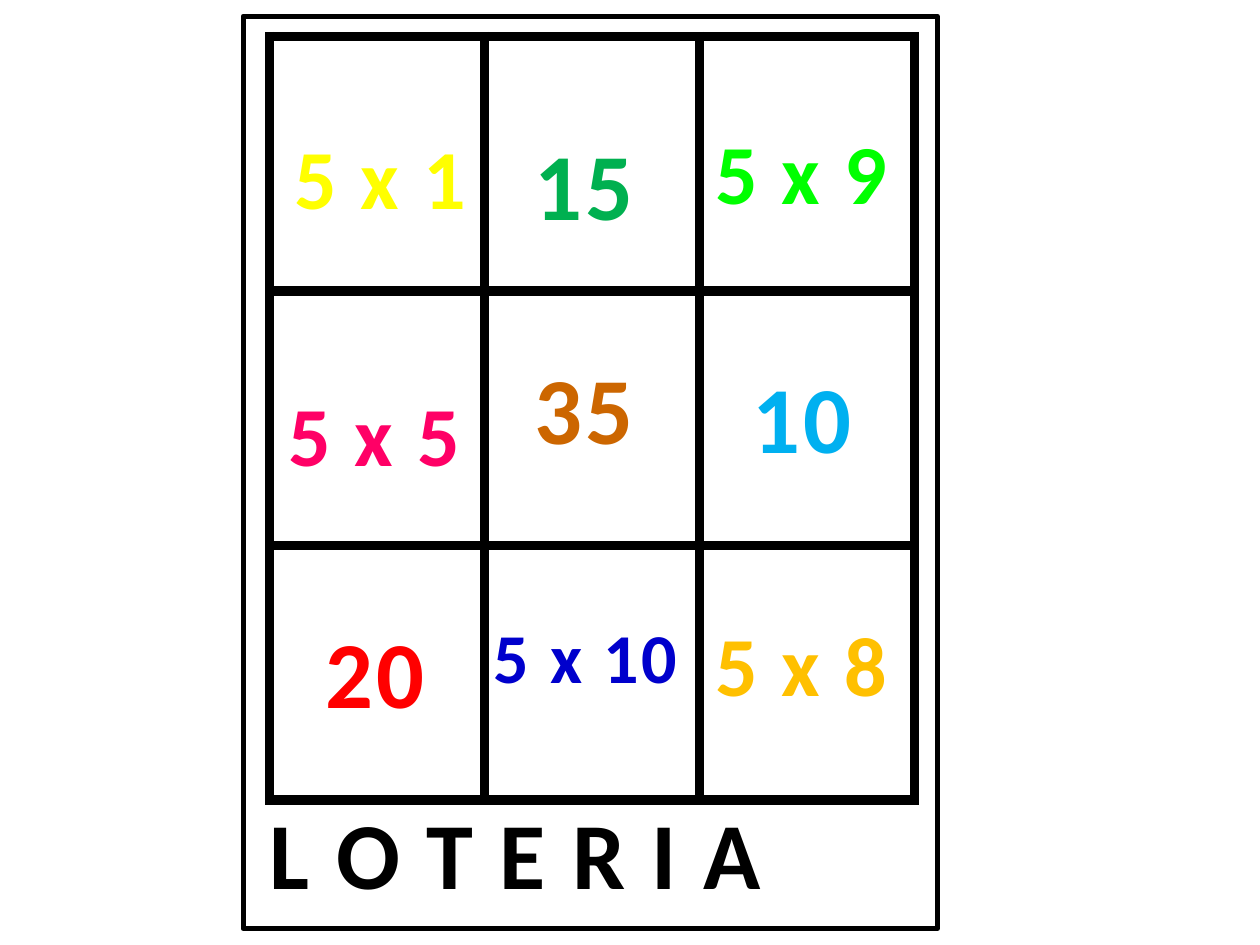
from lxml import etree
from pptx import Presentation
from pptx import util as u
from pptx.dml.color import RGBColor
from pptx.enum import shapes, text
from pptx.oxml.ns import qn

Inches, Pt = u.Inches, u.Pt

COLORS = {
    "black": "000000", "pink": "FF0066", "amber": "FFC000", "lime": "00FF00",
    "navy": "0000CC", "sky": "00B0F0", "green": "00B050", "red": "FF0000",
    "brown": "CC6600", "yellow": "FFFF00",
}
FONT = "Calibri"
GRID_SIZE = 3

# Label, left, top, width, height, font size, colour
LABELS = [
    ("5 x 5", 2.17, 2.99, 1.6, 0.91, 48, "pink"),
    ("5 x 8", 5.56, 4.81, 1.6, 0.91, 48, "amber"),
    ("5 x 9", 5.56, 0.91, 1.6, 0.91, 48, "lime"),
    ("5 x 10", 3.8, 4.82, 1.69, 0.77, 40, "navy"),
    ("10", 5.86, 2.8, 1.01, 1.01, 54, "sky"),
    ("15", 4.13, 0.95, 1.01, 1.01, 54, "green"),
    ("20", 2.47, 4.82, 1.01, 1.01, 54, "red"),
    ("35", 4.13, 2.73, 1.01, 1.01, 54, "brown"),
    ("L O T E R I A", 2.01, 6.26, 4.17, 1.01, 54, "black"),
    ("5 x 1", 2.22, 0.95, 1.6, 0.91, 48, "yellow"),
]


def rgb(name):
    return RGBColor.from_string(COLORS[name])


def set_borders(cell, color, points):
    """Draw the same solid line on all four sides of a cell."""
    props = cell._tc.get_or_add_tcPr()
    for index, side in enumerate(("lnL", "lnR", "lnT", "lnB")):
        line = etree.Element(qn(f"a:{side}"), w=str(Pt(points)))
        fill = etree.SubElement(line, qn("a:solidFill"))
        etree.SubElement(fill, qn("a:srgbClr"), val=COLORS[color])
        props.insert(index, line)


def add_board(page):
    frame = page.shapes.add_table(GRID_SIZE, GRID_SIZE, Inches(2.14), Inches(0.29),
                                  Inches(5.12), Inches(6.06))
    table = frame.table
    table.first_row = table.horz_banding = False
    for cell in table.iter_cells():
        cell.fill.background()
        set_borders(cell, "black", 6)


def add_card_frame(page):
    card = page.shapes.add_shape(shapes.MSO_SHAPE.RECTANGLE, Inches(1.93),
                                 Inches(0.13), Inches(5.51), Inches(7.24))
    card.shadow.inherit = False
    card.fill.background()
    card.line.color.rgb = rgb("black")
    card.line.width = Pt(3)


def add_label(page, label, left, top, width, height, size, color):
    box = page.shapes.add_textbox(Inches(left), Inches(top), Inches(width), Inches(height))
    frame = box.text_frame
    frame.text = label
    frame.word_wrap = False
    frame.auto_size = text.MSO_AUTO_SIZE.SHAPE_TO_FIT_TEXT
    para = frame.paragraphs[0]
    para.alignment = text.PP_ALIGN.CENTER
    span = para.runs[0]
    span.font.name = FONT
    span.font.size = Pt(size)
    span.font.bold = True
    span.font.color.rgb = rgb(color)
    span._r.get_or_add_rPr().set("spc", "150")


def main():
    deck = Presentation()
    deck.slide_width, deck.slide_height = Inches(10), Inches(7.5)
    page = deck.slides.add_slide(deck.slide_layouts[6])
    add_board(page)
    add_card_frame(page)
    for label in LABELS:
        add_label(page, *label)
    deck.save("out.pptx")


if __name__ == "__main__":
    main()
